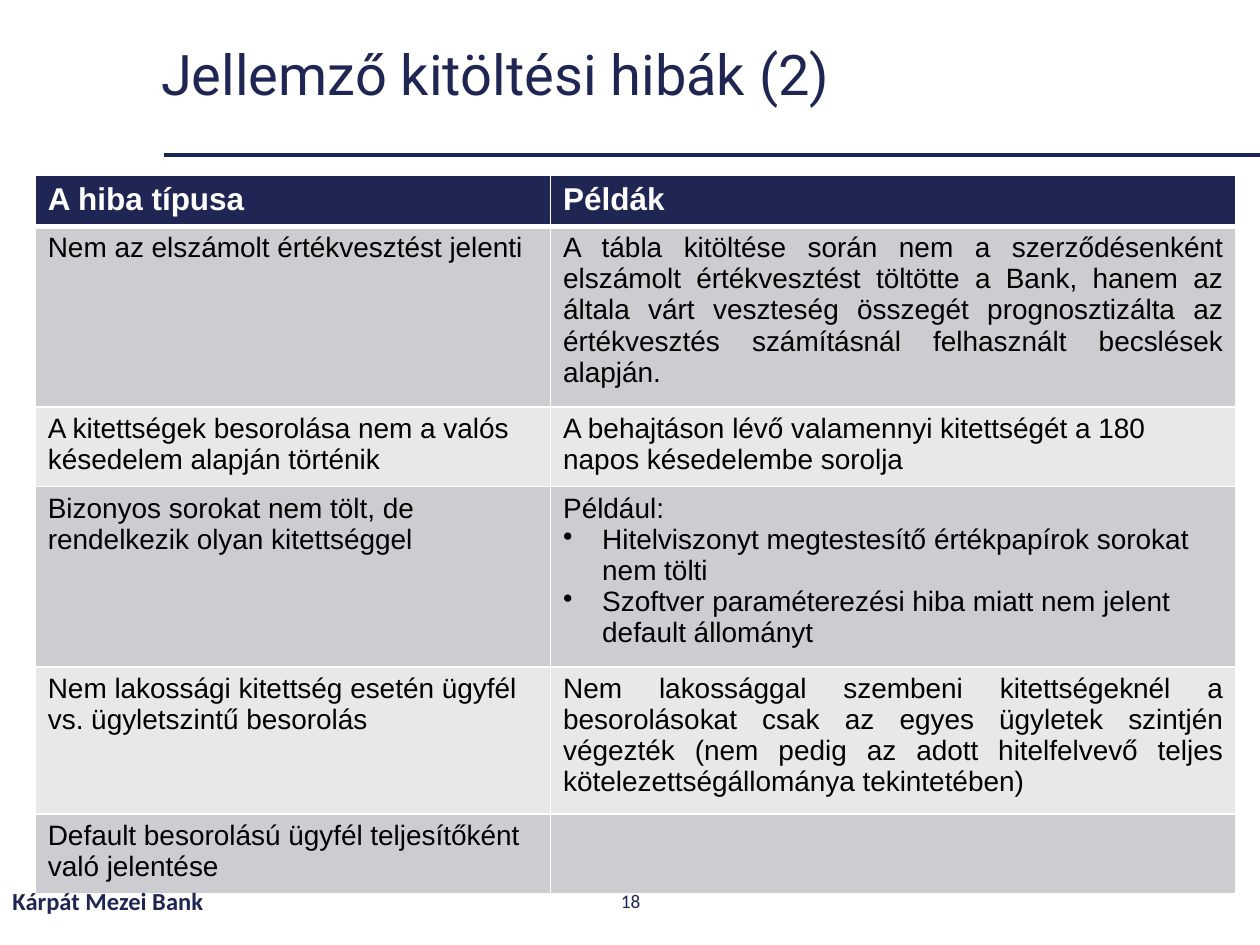
from lxml import etree
from pptx import Presentation
from pptx import util as u
from pptx.dml.color import RGBColor
from pptx.enum import shapes, text
from pptx.oxml import ns

NAVY, RULE, WHITE = "202653", "1E2452", "FFFFFF"
BANDS = "CDCDD1", "E8E8E9"
LEFT, MID, JUST = text.PP_ALIGN.LEFT, text.PP_ALIGN.CENTER, text.PP_ALIGN.JUSTIFY

HEAD = "A hiba típusa", "Példák"
ROWS = [
    ("Nem az elszámolt értékvesztést jelenti",
     ["A tábla kitöltése során nem a szerződésenként elszámolt értékvesztést "
      "töltötte a Bank, hanem az általa várt veszteség összegét prognosztizálta "
      "az értékvesztés számításnál felhasznált becslések alapján."], JUST),
    ("A kitettségek besorolása nem a valós késedelem alapján történik",
     ["A behajtáson lévő valamennyi kitettségét a 180 napos késedelembe sorolja"], LEFT),
    ("Bizonyos sorokat nem tölt, de rendelkezik olyan kitettséggel",
     ["Például:",
      "• Hitelviszonyt megtestesítő értékpapírok sorokat nem tölti",
      "• Szoftver paraméterezési hiba miatt nem jelent default állományt"], LEFT),
    ("Nem lakossági kitettség esetén ügyfél vs. ügyletszintű besorolás",
     ["Nem lakossággal szembeni kitettségeknél a besorolásokat csak az egyes "
      "ügyletek szintjén végezték (nem pedig az adott hitelfelvevő teljes "
      "kötelezettségállománya tekintetében)"], JUST),
    ("Default besorolású ügyfél teljesítőként való jelentése", [], LEFT),
]


def hue(code):
    return RGBColor.from_string(code)


def node(parent, tag, **attrs):
    return etree.SubElement(parent, ns.qn(tag), {k: str(v) for k, v in attrs.items()})


def write(frame, lines, font="Arial", size=16, color="000000", bold=False,
          align=LEFT, space=None):
    for i, line in enumerate(lines):
        para = frame.paragraphs[0] if i == 0 else frame.add_paragraph()
        para.alignment = align
        if space:
            para.line_spacing = space
        if line.startswith("• "):
            props = para._p.get_or_add_pPr()
            props.set("marL", str(u.Inches(0.31)))
            props.set("indent", str(-u.Inches(0.31)))
            node(props, "a:buChar", char="•")
            line = line[2:]
        run = para.add_run()
        run.text = line
        run.font.name, run.font.size, run.font.bold = font, u.Pt(size), bold
        run.font.color.rgb = hue(color)


class Deck:
    def __init__(self, wide, high):
        self.prs = Presentation()
        self.prs.slide_width, self.prs.slide_height = u.Inches(wide), u.Inches(high)
        self.slide = self.prs.slides.add_slide(self.prs.slide_layouts[6])

    def x(self, share):
        return round(self.prs.slide_width * share / 100)

    def y(self, share):
        return round(self.prs.slide_height * share / 100)

    def area(self, left, top, wide, high):
        return self.x(left), self.y(top), self.x(wide), self.y(high)

    def label(self, area, line, **style):
        frame = self.slide.shapes.add_textbox(*self.area(*area)).text_frame
        frame.word_wrap = True
        frame.vertical_anchor = text.MSO_ANCHOR.MIDDLE
        write(frame, [line], **style)

    def rule(self, start, end, level, color, width):
        line = self.slide.shapes.add_connector(
            shapes.MSO_CONNECTOR.STRAIGHT,
            self.x(start), self.y(level), self.x(end), self.y(level))
        line.line.color.rgb, line.line.width = hue(color), u.Pt(width)
        node(line._element.spPr, "a:effectLst")

    def cell(self, cell, lines, fill, base=1, **style):
        props = cell._tc.get_or_add_tcPr()
        for side, width in zip("LRTB", (1, 1, 1, base)):
            edge = node(props, f"a:ln{side}", w=u.Pt(width))
            node(node(edge, "a:solidFill"), "a:srgbClr", val=WHITE)
        cell.fill.solid()
        cell.fill.fore_color.rgb = hue(fill)
        write(cell.text_frame, lines, **style)

    def table(self, left, top, cols, highs, head, rows):
        grid = self.slide.shapes.add_table(
            len(highs), len(cols), *self.area(left, top, sum(cols), sum(highs))).table
        for col, wide in zip(grid.columns, cols):
            col.width = self.x(wide)
        for row, high in zip(grid.rows, highs):
            row.height = self.y(high)
        for c, name in enumerate(head):
            self.cell(grid.cell(0, c), [name], NAVY, base=3,
                      size=18, color=WHITE, bold=True)
        for r, (fault, lines, align) in enumerate(rows):
            fill = BANDS[r % 2]
            self.cell(grid.cell(r + 1, 0), [fault], fill)
            self.cell(grid.cell(r + 1, 1), lines, fill, align=align)


def main():
    deck = Deck(10, 7.5)
    deck.rule(13, 100, 16.4, RULE, 2.25)
    deck.label((11.8, 2.67, 81.9, 11.07), "Jellemző kitöltési hibák (2)",
               font="Roboto", size=32, color=NAVY, align=JUST, space=0.9)
    deck.table(2.8, 18.6, (40.9, 54.4), (5.2, 18.75, 8.25, 18.75, 15.25, 8.25),
               HEAD, ROWS)
    foot = dict(font="Calibri", color=NAVY)
    deck.label((0, 92.67, 33.8, 5.33), "Kárpát Mezei Bank", size=14, bold=True, **foot)
    deck.label((38.8, 92.67, 22.5, 5.33), "18", size=11, align=MID, **foot)
    deck.prs.save("out.pptx")


if __name__ == "__main__":
    main()
